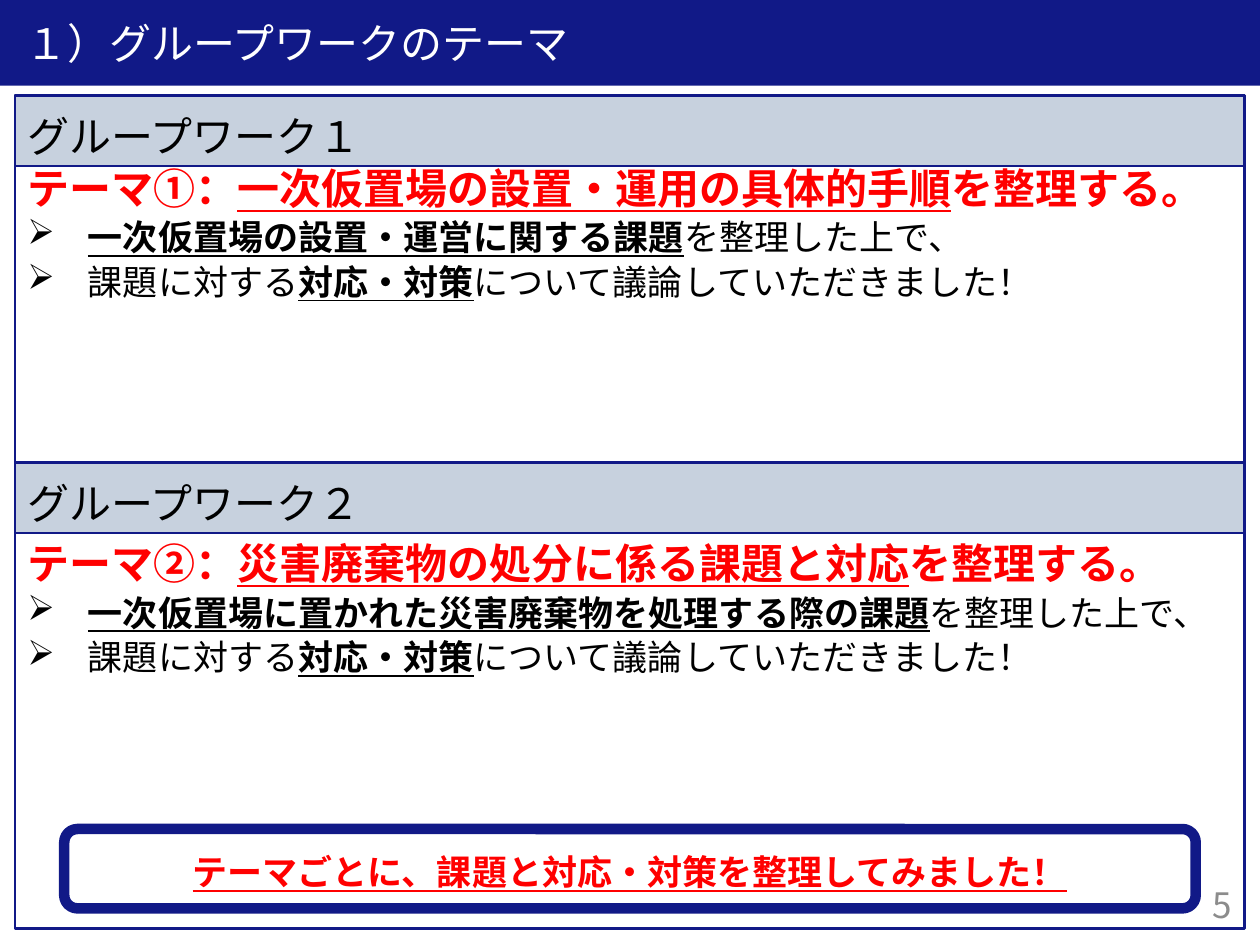
import pptx
import pptx.dml.color
import pptx.enum.shapes
import pptx.enum.text
import pptx.oxml.ns
import pptx.util
from lxml import etree
from pptx.util import Inches

NAVY, RED, BLACK, WHITE = "111987", "FF0000", "000000", "FFFFFF"
FONT = "Noto Sans CJK JP"
SHAPES = pptx.enum.shapes.MSO_SHAPE
ALIGN = pptx.enum.text.PP_ALIGN

presentation = pptx.Presentation()
presentation.slide_width = Inches(10)
presentation.slide_height = Inches(7.5)
slide = presentation.slides.add_slide(presentation.slide_layouts[6])


def add_box(place, fill=None, line_width=0, preset=SHAPES.RECTANGLE,
            insets=(0.1, 0.05, 0.1, 0.05),
            anchor=pptx.enum.text.MSO_ANCHOR.MIDDLE):
    """Add a shape; without fill or line width, that part stays invisible."""
    shape = slide.shapes.add_shape(preset, *[Inches(value) for value in place])
    shape.shadow.inherit = False
    if fill:
        shape.fill.solid()
        shape.fill.fore_color.rgb = pptx.dml.color.RGBColor.from_string(fill)
    else:
        shape.fill.background()
    if line_width:
        shape.line.color.rgb = pptx.dml.color.RGBColor.from_string(NAVY)
        shape.line.width = pptx.util.Pt(line_width)
    else:
        shape.line.fill.background()
    frame = shape.text_frame
    frame.word_wrap = True
    frame.vertical_anchor = anchor
    (frame.margin_left, frame.margin_top,
     frame.margin_right, frame.margin_bottom) = [Inches(value) for value in insets]
    frame.paragraphs[0].alignment = ALIGN.LEFT
    return shape


def add_run(paragraph, text, size, color, bold=False, underline=False, latin=FONT):
    run = paragraph.add_run()
    run.text = text
    font = run.font
    font.size = pptx.util.Pt(size)
    font.bold = bold
    font.underline = underline
    font.color.rgb = pptx.dml.color.RGBColor.from_string(color)
    font.name = latin
    east_asian = etree.SubElement(run._r.get_or_add_rPr(), pptx.oxml.ns.qn("a:ea"))
    east_asian.set("typeface", FONT)


# Title bar and slide number
title = add_box((0, 0, 10, 0.68), fill=NAVY, insets=(0.2, 0.05, 0.1, 0.05))
add_run(title.text_frame.paragraphs[0], "１）グループワークのテーマ", 24, WHITE, latin="Lato")

number = add_box((9.25, 6.98, 0.63, 0.39))
number.text_frame.paragraphs[0].alignment = ALIGN.RIGHT
add_run(number.text_frame.paragraphs[0], "5", 20, "8C8C8C")

# Frame around both group works
left, width = 0.12, 9.76
add_box((left, 0.76, width, 6.61), line_width=1.5)

# Each group work: heading, tops of heading and text, theme, issue
group_works = [
    ("グループワーク１", 0.76, 1.29,
     ("テーマ①：", "一次仮置場の設置・運用の具体的手順"),
     "一次仮置場の設置・運営に関する課題"),
    ("グループワーク２", 3.67, 4.27,
     ("テーマ②：", "災害廃棄物の処分に係る課題と対応"),
     "一次仮置場に置かれた災害廃棄物を処理する際の課題"),
]
for heading, heading_top, text_top, (label, theme), issue in group_works:
    bar = add_box((left, heading_top, width, 0.56), fill="C7D1DE", line_width=1.5,
                  insets=(0.1, 0.12, 0.1, 0.04))
    add_run(bar.text_frame.paragraphs[0], heading, 24, BLACK)

    body = add_box((left, text_top, width, 1.4), insets=(0.1, 0, 0.1, 0),
                   anchor=pptx.enum.text.MSO_ANCHOR.TOP)
    paragraph = body.text_frame.paragraphs[0]
    add_run(paragraph, label, 24, RED, bold=True)
    add_run(paragraph, theme, 24, RED, bold=True, underline=True)
    add_run(paragraph, "を整理する。", 24, RED, bold=True)

    points = [("", issue, "を整理した上で、"),
              ("課題に対する", "対応・対策", "について議論していただきました！")]
    for before, emphasis, after in points:
        paragraph = body.text_frame.add_paragraph()
        paragraph.alignment = ALIGN.LEFT
        paragraph.space_before = pptx.util.Pt(1.5)
        properties = paragraph._p.get_or_add_pPr()
        properties.set("marL", str(Inches(0.48)))
        properties.set("indent", str(-Inches(0.48)))
        bullet = etree.SubElement(properties, pptx.oxml.ns.qn("a:buChar"))
        bullet.set("char", "➢")
        if before:
            add_run(paragraph, before, 20, BLACK)
        add_run(paragraph, emphasis, 20, BLACK, bold=True, underline=True)
        add_run(paragraph, after, 20, BLACK)

# Closing message
message = add_box((0.51, 6.58, 8.98, 0.63), fill=WHITE, line_width=6,
                  preset=SHAPES.ROUNDED_RECTANGLE, insets=(0.1, 0.05, 0.1, 0))
message.text_frame.paragraphs[0].alignment = ALIGN.CENTER
add_run(message.text_frame.paragraphs[0],
        "テーマごとに、課題と対応・対策を整理してみました！", 20, RED,
        bold=True, underline=True)

presentation.save("out.pptx")
